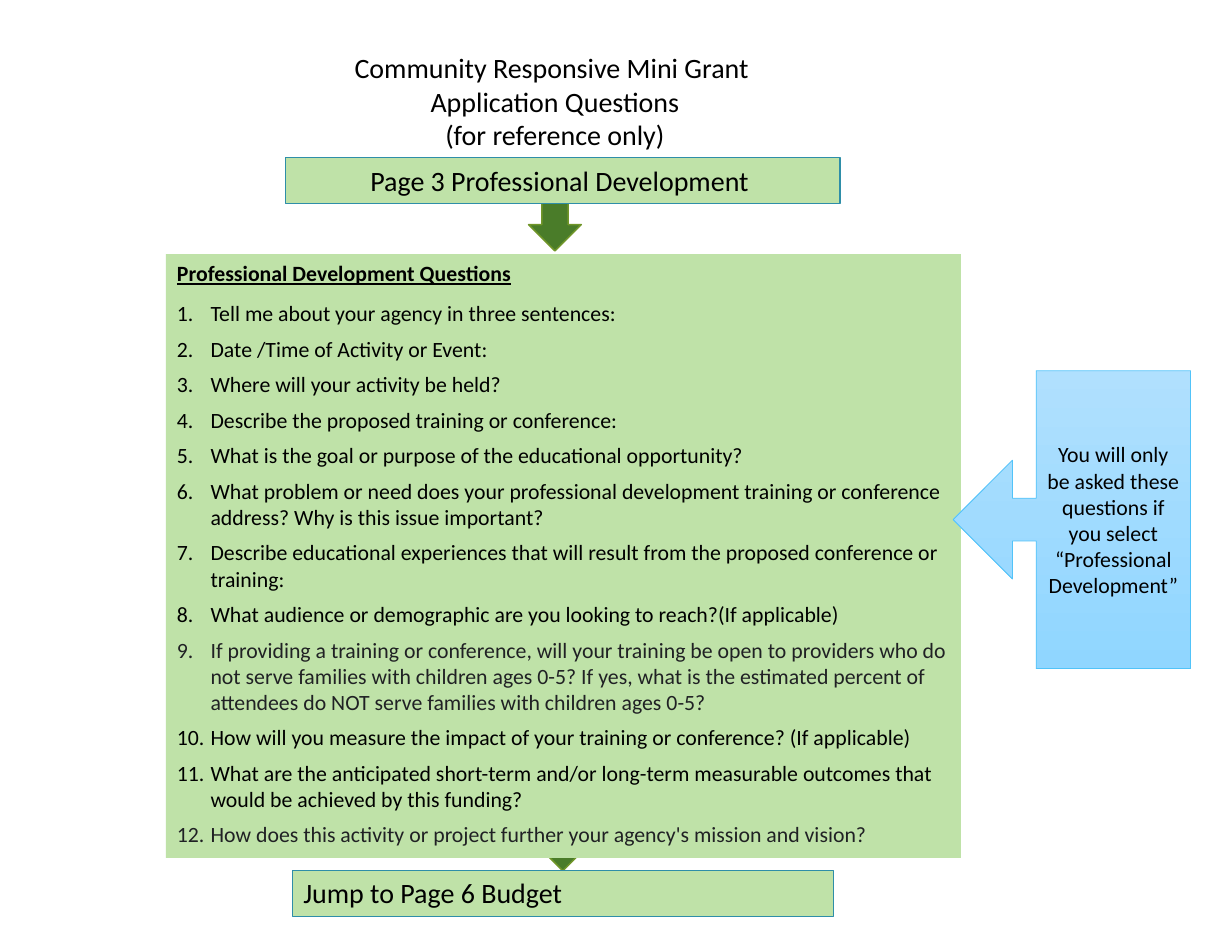
from dataclasses import dataclass
from typing import Optional

import pptx
import pptx.dml.color
import pptx.enum.shapes
import pptx.enum.text
import pptx.oxml.ns
import pptx.util
from lxml import etree

Inches = pptx.util.Inches
Pt = pptx.util.Pt
Preset = pptx.enum.shapes.MSO_SHAPE
Align = pptx.enum.text.PP_ALIGN
Anchor = pptx.enum.text.MSO_ANCHOR


@dataclass(frozen=True)
class Theme:
    font: str = "Calibri"
    heading_size: float = 18
    body_size: float = 14
    ink: str = "000000"
    soft_ink: str = "202124"
    panel: str = "BFE2A8"
    panel_edge: str = "2E8EA8"
    arrow: str = "4A7C29"
    arrow_edge: str = "719629"
    callout_top: str = "B0E0FE"
    callout_bottom: str = "90D6FF"
    callout_edge: str = "51C3F9"


@dataclass(frozen=True)
class Box:
    left: float
    top: float
    width: float
    height: float


@dataclass(frozen=True)
class Banner:
    text: str
    box: Box
    align: Align


@dataclass(frozen=True)
class Question:
    text: str
    color: str = Theme.ink


THEME = Theme()
TITLE_LINES = ["Community Responsive Mini Grant ", "Application Questions", "(for reference only)"]
ARROWS = [Box(4.4, 6.84, 1.25, 0.62), Box(4.68, 1.73, 0.55, 0.47)]
BANNERS = [
    Banner("Page 3 Professional Development ", Box(2.55, 1.41, 4.95, 0.41), Align.CENTER),
    Banner("Jump to Page 6 Budget", Box(2.61, 7.77, 4.83, 0.41), Align.LEFT),
]
QUESTIONS = [
    Question("Tell me about your agency in three sentences:"),
    Question("Date /Time of Activity or Event:"),
    Question("Where will your activity be held?"),
    Question("Describe the proposed training or conference:"),
    Question("What is the goal or purpose of the educational opportunity?"),
    Question("What problem or need does your professional development training or "
             "conference address? Why is this issue important?"),
    Question("Describe educational experiences that will result from the proposed "
             "conference or training:"),
    Question("What audience or demographic are you looking to reach?(If applicable)"),
    Question("If providing a training or conference, will your training be open to "
             "providers who do not serve families with children ages 0-5? If yes, what is "
             "the estimated percent of attendees do NOT serve families with children "
             "ages 0-5?", THEME.soft_ink),
    Question("How will you measure the impact of your training or conference? (If applicable)"),
    Question("What are the anticipated short-term and/or long-term measurable outcomes "
             "that would be achieved by this funding?"),
    Question("How does this activity or project further your agency's mission and vision?",
             THEME.soft_ink),
]


def rgb(value: str) -> pptx.dml.color.RGBColor:
    return pptx.dml.color.RGBColor.from_string(value)


def place(shape, box: Box) -> None:
    shape.left, shape.top = Inches(box.left), Inches(box.top)
    shape.width, shape.height = Inches(box.width), Inches(box.height)


def write(paragraph, text: str, *, size: float = THEME.body_size, color: str = THEME.ink,
          bold: bool = False, underline: bool = False, align: Align = Align.LEFT,
          spacing: float = 0) -> None:
    paragraph.alignment = align
    paragraph.space_before = paragraph.space_after = Pt(spacing)
    run = paragraph.add_run()
    run.text = text
    run.font.name = THEME.font
    run.font.size = Pt(size)
    run.font.bold = bold
    run.font.underline = underline
    run.font.color.rgb = rgb(color)


def set_bullet(paragraph, indent: float, numbering: Optional[str] = None) -> None:
    properties = paragraph._p.get_or_add_pPr()
    properties.set("marL", str(Inches(indent)))
    properties.set("indent", str(-Inches(indent)))
    tag = "a:buAutoNum" if numbering else "a:buNone"
    bullet = etree.SubElement(properties, pptx.oxml.ns.qn(tag))
    if numbering:
        bullet.set("type", numbering)


def add_preset(slide, preset: Preset, box: Box, edge: str, edge_width: float,
               fill: Optional[str] = None):
    shape = slide.shapes.add_shape(preset, 0, 0, 0, 0)
    place(shape, box)
    shape.shadow.inherit = False
    if fill:
        shape.fill.solid()
        shape.fill.fore_color.rgb = rgb(fill)
    shape.line.color.rgb = rgb(edge)
    shape.line.width = Pt(edge_width)
    shape.text_frame.word_wrap = True
    return shape


def add_arrow(slide, box: Box) -> None:
    arrow = add_preset(slide, Preset.RIGHT_ARROW, box, THEME.arrow_edge, 1, THEME.arrow)
    arrow.rotation = 90
    slide.shapes._spTree.insert(2, arrow._element)


def add_banner(slide, banner: Banner) -> None:
    shape = add_preset(slide, Preset.RECTANGLE, banner.box, THEME.panel_edge, 0.75, THEME.panel)
    shape.text_frame.vertical_anchor = Anchor.TOP
    write(shape.text_frame.paragraphs[0], banner.text, size=THEME.heading_size,
          align=banner.align, spacing=6)


def add_callout(slide) -> None:
    callout = add_preset(slide, Preset.LEFT_ARROW_CALLOUT, Box(8.51, 3.31, 2.12, 2.66),
                         THEME.callout_edge, 0.5)
    for index, value in enumerate([0.182, 0.25, 0.25, 0.65]):
        callout.adjustments[index] = round(value, 2) if index else 0.18
    callout.fill.gradient()
    callout.fill.gradient_angle = 270
    for stop, color in zip(callout.fill.gradient_stops, [THEME.callout_top, THEME.callout_bottom]):
        stop.color.rgb = rgb(color)
    callout.text_frame.vertical_anchor = Anchor.MIDDLE
    write(callout.text_frame.paragraphs[0],
          "You will only be asked these questions if you select “Professional Development”",
          align=Align.CENTER)


def prepare_placeholder(placeholder, box: Box):
    place(placeholder, box)
    frame = placeholder.text_frame
    frame.word_wrap = True
    frame.auto_size = pptx.enum.text.MSO_AUTO_SIZE.NONE
    frame.vertical_anchor = Anchor.TOP
    return frame


def fill_title(title) -> None:
    frame = prepare_placeholder(title, Box(2.48, 0.4, 4.95, 1.01))
    for index, line in enumerate(TITLE_LINES):
        paragraph = frame.add_paragraph() if index else frame.paragraphs[0]
        write(paragraph, line, size=THEME.heading_size, align=Align.CENTER)


def fill_questions(body) -> None:
    frame = prepare_placeholder(body, Box(1.48, 2.27, 7.1, 5.39))
    body.fill.solid()
    body.fill.fore_color.rgb = rgb(THEME.panel)
    heading = frame.paragraphs[0]
    write(heading, "Professional Development Questions", bold=True, underline=True, spacing=6)
    set_bullet(heading, 0)
    for question in QUESTIONS:
        paragraph = frame.add_paragraph()
        write(paragraph, question.text, color=question.color, spacing=3)
        set_bullet(paragraph, 0.3, "arabicPeriod")


def main() -> None:
    deck = pptx.Presentation()
    deck.slide_width, deck.slide_height = Inches(11), Inches(8.5)
    slide = deck.slides.add_slide(deck.slide_layouts[1])
    fill_title(slide.shapes.title)
    fill_questions(slide.placeholders[1])
    for arrow in ARROWS:
        add_arrow(slide, arrow)
    for banner in BANNERS:
        add_banner(slide, banner)
    add_callout(slide)
    deck.save("out.pptx")


if __name__ == "__main__":
    main()
